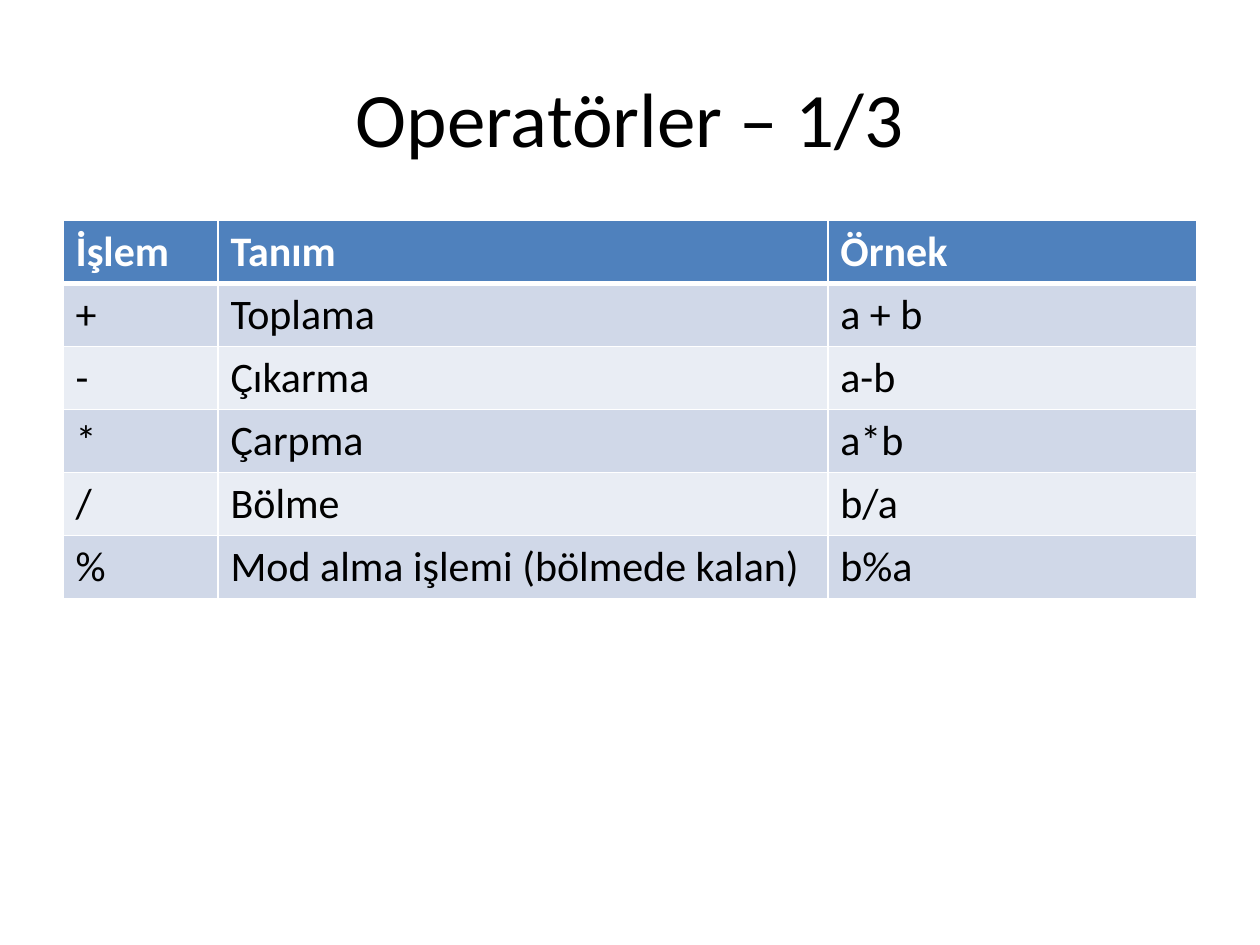
from dataclasses import dataclass

from lxml import etree
from pptx import Presentation
from pptx.dml.color import RGBColor
from pptx.enum.text import MSO_ANCHOR, PP_ALIGN
from pptx.oxml.ns import qn
from pptx.util import Inches, Pt

CENTER = PP_ALIGN.CENTER
MIDDLE = MSO_ANCHOR.MIDDLE


@dataclass(frozen=True)
class Theme:
    font: str = "Calibri"
    title_size: int = 44
    table_size: int = 24
    text: str = "000000"
    header_text: str = "FFFFFF"
    header_fill: str = "4F81BD"
    bands: tuple = ("D0D8E8", "E9EDF4")
    border: str = "FFFFFF"
    border_width: int = 1
    header_rule: int = 3


THEME = Theme()

OPERATORS = [
    ("İşlem", "Tanım", "Örnek"),
    ("+", "Toplama", "a + b"),
    ("-", "Çıkarma", "a-b"),
    ("*", "Çarpma", "a*b"),
    ("/", "Bölme", "b/a"),
    ("%", "Mod alma işlemi (bölmede kalan)", "b%a"),
]
COLUMN_WIDTHS = [Inches(width) for width in (1.23, 4.84, 2.93)]


def style_text(paragraph, size, color, bold=False):
    for run in paragraph.runs:
        run.font.name = THEME.font
        run.font.size = Pt(size)
        run.font.bold = bold
        run.font.color.rgb = RGBColor.from_string(color)


def set_borders(cell, widths):
    """Draw the left, right, top and bottom borders, with widths in points."""
    properties = cell._tc.get_or_add_tcPr()
    for position, (side, width) in enumerate(zip("LRTB", widths)):
        line = etree.Element(qn(f"a:ln{side}"), w=str(Pt(width)))
        fill = etree.SubElement(line, qn("a:solidFill"))
        etree.SubElement(fill, qn("a:srgbClr"), val=THEME.border)
        properties.insert(position, line)


prs = Presentation()
prs.slide_width = Inches(10)
prs.slide_height = Inches(7.5)
slide = prs.slides.add_slide(prs.slide_layouts[6])

margin = int(prs.slide_width * 0.05)
content_width = prs.slide_width - 2 * margin

# Title
heading = slide.shapes.add_textbox(
    margin, int(prs.slide_height * 0.04), content_width, Inches(1.25)
).text_frame
heading.word_wrap = True
heading.vertical_anchor = MIDDLE
heading.text = "Operatörler – 1/3"
heading.paragraphs[0].alignment = CENTER
style_text(heading.paragraphs[0], THEME.title_size, THEME.text)

# Operator table
operator_table = slide.shapes.add_table(
    len(OPERATORS), len(COLUMN_WIDTHS), margin, Inches(1.75), content_width, Inches(3)
).table
for column, width in zip(operator_table.columns, COLUMN_WIDTHS):
    column.width = width

for row_index, entries in enumerate(OPERATORS):
    is_header = row_index == 0
    fill_color = THEME.header_fill if is_header else THEME.bands[(row_index - 1) % 2]
    text_color = THEME.header_text if is_header else THEME.text
    top = THEME.header_rule if row_index == 1 else THEME.border_width
    bottom = THEME.header_rule if is_header else THEME.border_width
    for column_index, entry in enumerate(entries):
        cell = operator_table.cell(row_index, column_index)
        cell.text_frame.text = entry
        style_text(cell.text_frame.paragraphs[0], THEME.table_size, text_color, is_header)
        cell.fill.solid()
        cell.fill.fore_color.rgb = RGBColor.from_string(fill_color)
        set_borders(cell, (THEME.border_width, THEME.border_width, top, bottom))

prs.save("out.pptx")
